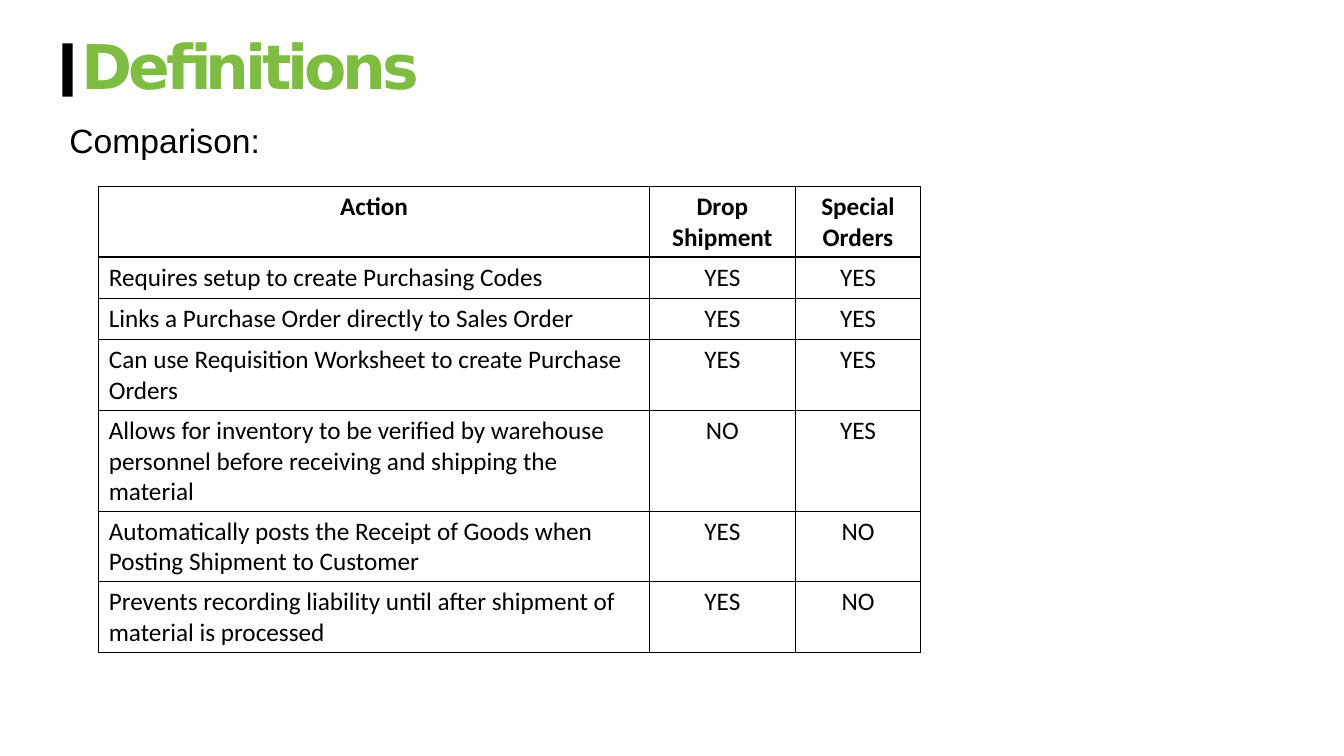
"""Build a slide comparing drop shipments with special orders."""
from lxml.etree import SubElement
from pptx import Presentation
from pptx.dml.color import RGBColor
from pptx.enum.shapes import MSO_SHAPE as Shape
from pptx.enum.text import MSO_AUTO_SIZE as AutoSize, PP_ALIGN as Align
from pptx.oxml.ns import qn
from pptx.util import Inches, Pt

GREEN = RGBColor(0x7F, 0xBD, 0x42)
BLACK = RGBColor(0x00, 0x00, 0x00)

COLUMN_WIDTHS = (5.46, 1.45, 1.24)
ROW_HEIGHT = 0.41
COMPARISON = (
    ("Action", "Drop Shipment", "Special Orders"),
    ("Requires setup to create Purchasing Codes", "YES", "YES"),
    ("Links a Purchase Order directly to Sales Order", "YES", "YES"),
    ("Can use Requisition Worksheet to create Purchase Orders", "YES", "YES"),
    ("Allows for inventory to be verified by warehouse personnel before "
     "receiving and shipping the material", "NO", "YES"),
    ("Automatically posts the Receipt of Goods when Posting Shipment to "
     "Customer", "YES", "NO"),
    ("Prevents recording liability until after shipment of material is "
     "processed", "YES", "NO"),
)


def style_font(para, name, size, color, bold=False):
    """Set the font of a whole paragraph."""
    font = para.font
    font.name, font.size, font.bold = name, Pt(size), bold
    font.color.rgb = color


def add_text(page, text, left, top, width, height):
    """Add a wrapping text box and return its frame and paragraph."""
    box = page.shapes.add_textbox(
        Inches(left), Inches(top), Inches(width), Inches(height))
    frame = box.text_frame
    frame.word_wrap = True
    para = frame.paragraphs[0]
    para.text = text
    return frame, para


def add_title(page):
    """Add the tightly spaced green title and its black marker."""
    frame, para = add_text(page, "Definitions", 0.81, 0.28, 11.25, 0.77)
    frame.margin_left = frame.margin_right = 0
    frame.margin_top = frame.margin_bottom = 0
    para.space_before = Pt(1)
    style_font(para, "DejaVu Sans", 44, GREEN, bold=True)
    for span in para.runs:
        span.font._element.set("spc", "-300")

    marker = page.shapes.add_shape(
        Shape.RECTANGLE, Inches(0.62), Inches(0.43), Inches(0.1), Inches(0.53))
    marker.shadow.inherit = False
    marker.fill.solid()
    marker.fill.fore_color.rgb = BLACK
    marker.line.fill.background()


def add_subtitle(page):
    """Add the line that introduces the table."""
    frame, para = add_text(page, "Comparison:", 0.59, 1.11, 9.15, 0.5)
    frame.auto_size = AutoSize.SHAPE_TO_FIT_TEXT
    para.line_spacing = 1.07
    para.space_after = Pt(8)
    style_font(para, "Arial", 24, BLACK)


def add_borders(cell, color, width):
    """Draw a solid line on all four sides of a cell."""
    properties = cell._tc.get_or_add_tcPr()
    for side in ("lnL", "lnR", "lnT", "lnB"):
        line = SubElement(properties, qn(f"a:{side}"), w=str(Pt(width)))
        fill = SubElement(line, qn("a:solidFill"))
        SubElement(fill, qn("a:srgbClr"), val=str(color))


def fill_cell(cell, text, heading, centered):
    """Write and style one table cell."""
    add_borders(cell, BLACK, 1)
    cell.fill.background()
    cell.text = text
    para = cell.text_frame.paragraphs[0]
    para.alignment = Align.CENTER if centered else Align.LEFT
    style_font(para, "Calibri", 18, BLACK, bold=heading)


def add_comparison(page):
    """Add the comparison table."""
    height = Inches(4.61)
    holder = page.shapes.add_table(
        len(COMPARISON), len(COLUMN_WIDTHS), Inches(0.98), Inches(1.85),
        Inches(sum(COLUMN_WIDTHS)), height)
    table = holder.table
    table.horz_banding = False
    for column, width in zip(table.columns, COLUMN_WIDTHS):
        column.width = Inches(width)
    for row_index, texts in enumerate(COMPARISON):
        table.rows[row_index].height = Inches(ROW_HEIGHT)
        heading = row_index == 0
        for column_index, text in enumerate(texts):
            fill_cell(table.cell(row_index, column_index), text, heading,
                      heading or column_index > 0)
    holder.height = height


def main():
    """Build and save the deck."""
    deck = Presentation()
    deck.slide_width, deck.slide_height = Inches(13.33), Inches(7.5)
    page = deck.slides.add_slide(deck.slide_layouts[6])
    add_title(page)
    add_subtitle(page)
    add_comparison(page)
    deck.save("out.pptx")


if __name__ == "__main__":
    main()
